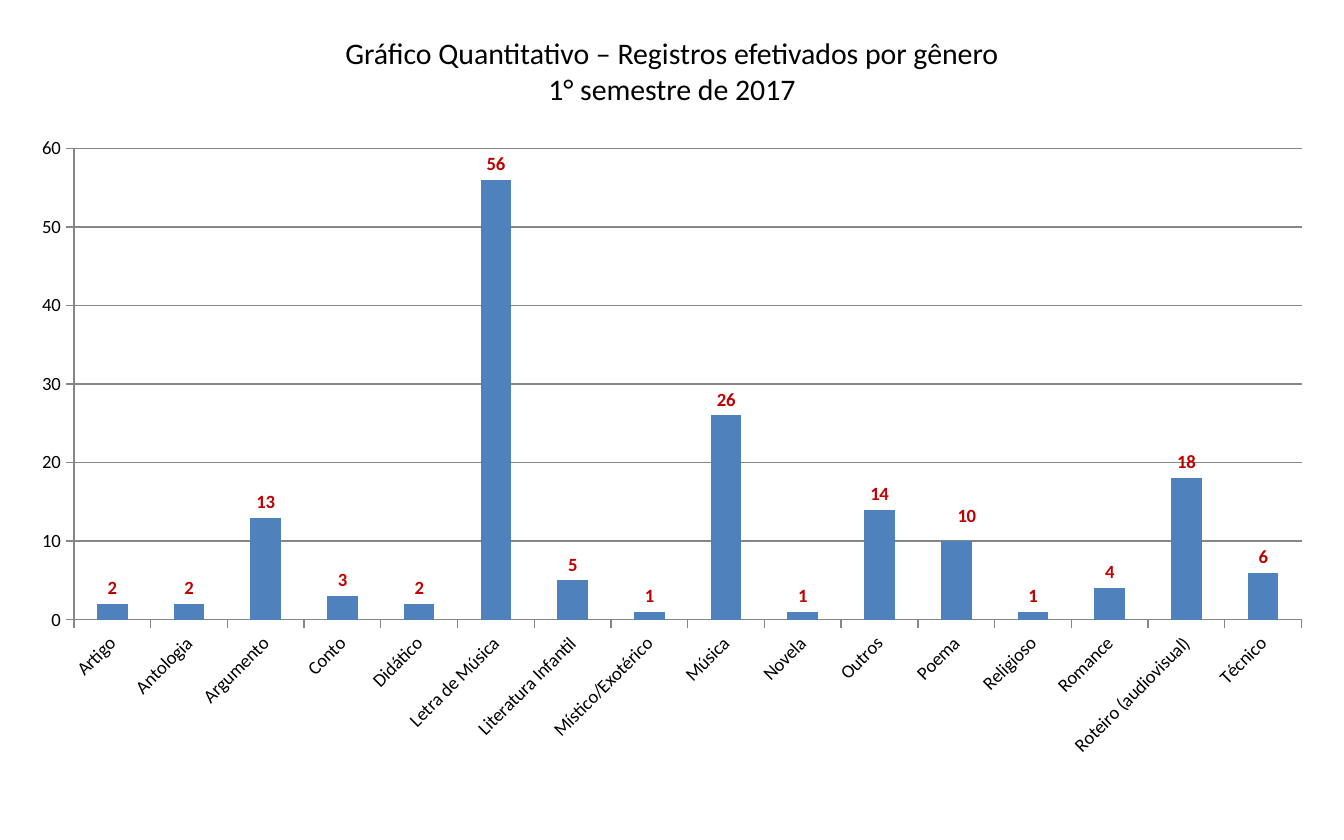
from dataclasses import dataclass
from typing import Any

from lxml.etree import SubElement
from pptx import Presentation
from pptx.chart.data import CategoryChartData as ChartData
from pptx.dml.color import RGBColor as Color
from pptx.enum.chart import XL_LABEL_POSITION as LabelPosition
from pptx.enum.chart import XL_CHART_TYPE as ChartType
from pptx.enum.chart import XL_TICK_MARK as TickMark
from pptx.enum.text import MSO_AUTO_SIZE as AutoSize
from pptx.enum.text import PP_ALIGN as Align
from pptx.oxml import parse_xml
from pptx.oxml.ns import nsdecls, qn
from pptx.util import Pt


@dataclass(frozen=True)
class Theme:
    font: str = "Calibri"
    title_size: float = 16
    chart_size: float = 10
    text: Color = Color(0, 0, 0)
    bar: Color = Color(0x4F, 0x81, 0xBD)
    label: Color = Color(0xC0, 0, 0)
    line: Color = Color(0x86, 0x86, 0x86)


@dataclass(frozen=True)
class Frame:
    left: float
    top: float
    width: float
    height: float

    def lengths(self) -> tuple:
        return Pt(self.left), Pt(self.top), Pt(self.width), Pt(self.height)


@dataclass(frozen=True)
class Genre:
    name: str
    count: int


THEME = Theme()
TITLE_FRAME = Frame(139, 15, 442, 46)
CHART_FRAME = Frame(8.64, 67, 702.7, 345.6)
TITLE = (
    "Gráfico Quantitativo – Registros efetivados por gênero",
    "1° semestre de 2017",
)
GENRES = (
    Genre("Artigo", 2),
    Genre("Antologia", 2),
    Genre("Argumento", 13),
    Genre("Conto", 3),
    Genre("Didático", 2),
    Genre("Letra de Música", 56),
    Genre("Literatura Infantil", 5),
    Genre("Místico/Exotérico", 1),
    Genre("Música", 26),
    Genre("Novela", 1),
    Genre("Outros", 14),
    Genre("Poema", 10),
    Genre("Religioso", 1),
    Genre("Romance", 4),
    Genre("Roteiro (audiovisual)", 18),
    Genre("Técnico", 6),
)
MOVED_LABEL = "Poema"


def apply(target: Any, values: dict) -> None:
    for name, value in values.items():
        setattr(target, name, value)


def style_font(font: Any, size: float, color: Color, bold: bool = False) -> None:
    apply(font, {"name": THEME.font, "size": Pt(size), "bold": bold})
    font.color.rgb = color


def style_line(line: Any) -> None:
    line.color.rgb = THEME.line
    line.width = Pt(0.75)


def make_layout(values: dict) -> Any:
    """Chart layout in fractions of the chart's size."""
    layout = parse_xml(f"<c:layout {nsdecls('c')}/>")
    manual = SubElement(layout, qn("c:manualLayout"))
    for name, value in values.items():
        SubElement(manual, qn(f"c:{name}")).set("val", str(value))
    return layout


def add_title(page: Any) -> None:
    box = page.shapes.add_textbox(*TITLE_FRAME.lengths())
    frame = box.text_frame
    apply(frame, {"word_wrap": True, "auto_size": AutoSize.SHAPE_TO_FIT_TEXT})
    for index, line in enumerate(TITLE):
        para = frame.add_paragraph() if index else frame.paragraphs[0]
        para.alignment = Align.CENTER
        span = para.add_run()
        span.text = line
        style_font(span.font, THEME.title_size, THEME.text)


def style_axes(chart: Any) -> None:
    for axis in (chart.category_axis, chart.value_axis):
        apply(axis, {"major_tick_mark": TickMark.OUTSIDE, "minor_tick_mark": TickMark.NONE})
        style_line(axis.format.line)
        style_font(axis.tick_labels.font, THEME.chart_size, THEME.text)
    apply(
        chart.value_axis,
        {"minimum_scale": 0, "maximum_scale": 60, "major_unit": 10, "has_major_gridlines": True},
    )
    style_line(chart.value_axis.major_gridlines.format.line)
    # Category names slant upwards by 45 degrees
    body = chart.category_axis._element.find(qn("c:txPr")).find(qn("a:bodyPr"))
    body.set("rot", str(-45 * 60000))


def style_labels(plot: Any, series: Any) -> None:
    labels = series.data_labels
    apply(labels, {"show_value": True, "position": LabelPosition.OUTSIDE_END})
    style_font(labels.font, THEME.chart_size, THEME.label, bold=True)
    # One label sits slightly up and to the right of its bar
    index = [genre.name for genre in GENRES].index(MOVED_LABEL)
    label = series.points[index].data_label
    style_font(label.font, THEME.chart_size, THEME.label, bold=True)
    label.position = LabelPosition.OUTSIDE_END
    element = series._element.find(f".//{qn('c:dLbl')}")
    element.insert(1, make_layout({"x": 0.008, "y": -0.014}))


def add_genre_chart(page: Any) -> None:
    data = ChartData()
    data.categories = [genre.name for genre in GENRES]
    data.add_series("Series 1", [genre.count for genre in GENRES])
    graphic = page.shapes.add_chart(ChartType.COLUMN_CLUSTERED, *CHART_FRAME.lengths(), data)
    chart = graphic.chart
    apply(chart, {"has_legend": False, "has_title": False})
    style_font(chart.font, THEME.chart_size, THEME.text)

    # Bars
    plot = chart.plots[0]
    apply(plot, {"gap_width": 150, "vary_by_categories": False})
    series = plot.series[0]
    series.format.fill.solid()
    series.format.fill.fore_color.rgb = THEME.bar

    style_axes(chart)
    style_labels(plot, series)

    # Fixed plot area, leaving room for the slanted names
    area = chart._chartSpace.find(f".//{qn('c:plotArea')}")
    for old in area.findall(qn("c:layout")):
        area.remove(old)
    area.insert(0, make_layout({
        "layoutTarget": "inner", "xMode": "edge", "yMode": "edge",
        "x": 0.044, "y": 0.036, "w": 0.936, "h": 0.731,
    }))


def main() -> None:
    deck = Presentation()
    apply(deck, {"slide_width": Pt(720), "slide_height": Pt(450)})
    page = deck.slides.add_slide(deck.slide_layouts[6])
    add_title(page)
    add_genre_chart(page)
    deck.save("out.pptx")


if __name__ == "__main__":
    main()
